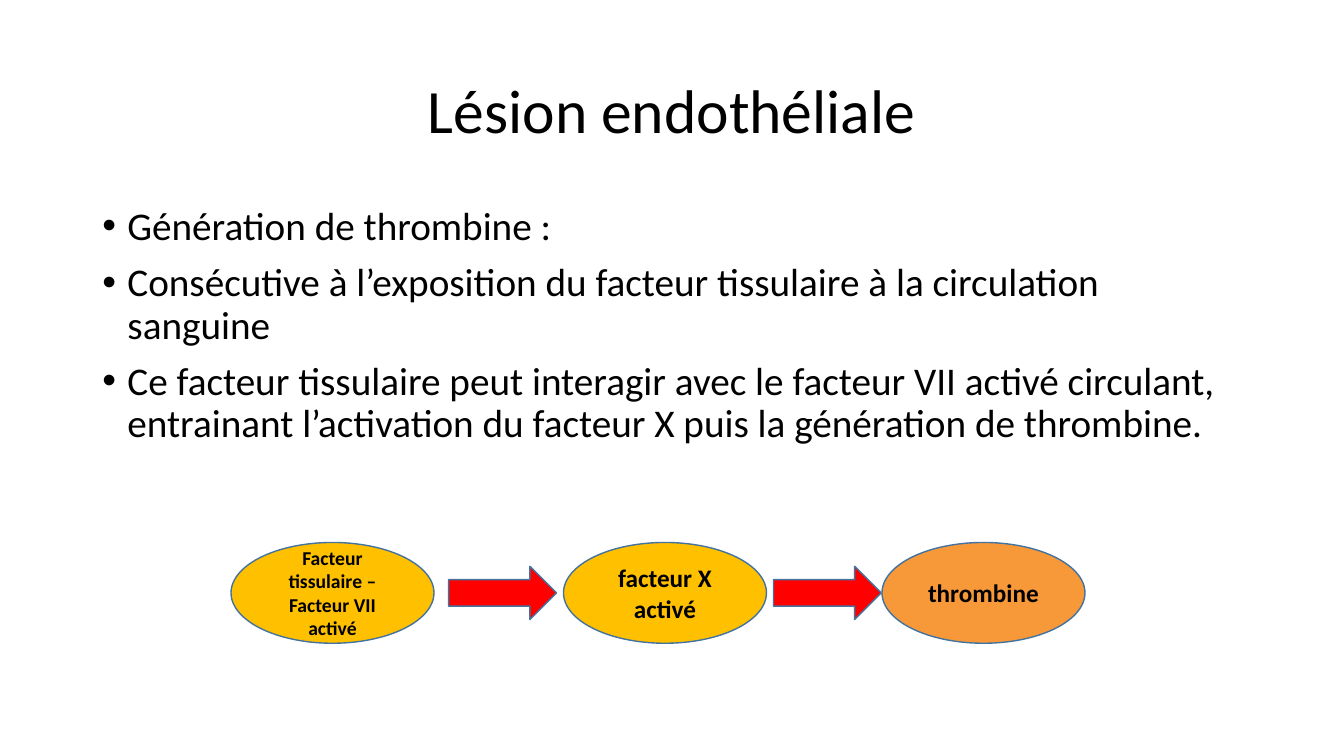
"""Builds the slide on endothelial injury and thrombin generation."""
import pptx
import pptx.util
import pptx.dml.color
import pptx.enum.shapes
import pptx.enum.text
import pptx.oxml

Pt = pptx.util.Pt
RGBColor = pptx.dml.color.RGBColor
MSO_SHAPE = pptx.enum.shapes.MSO_SHAPE
PP_ALIGN = pptx.enum.text.PP_ALIGN
MSO_ANCHOR = pptx.enum.text.MSO_ANCHOR

BLACK = RGBColor(0x00, 0x00, 0x00)
GOLD = RGBColor(0xFF, 0xC0, 0x00)
ORANGE = RGBColor(0xF7, 0x98, 0x39)
RED = RGBColor(0xFF, 0x00, 0x00)
OUTLINE = RGBColor(0x43, 0x73, 0x9E)

BULLETS = [
    "Génération de thrombine :",
    "Consécutive à l’exposition du facteur tissulaire à la circulation sanguine",
    "Ce facteur tissulaire peut interagir avec le facteur VII activé circulant, "
    "entrainant l’activation du facteur X puis la génération de thrombine.",
]
STAGES = [
    (165, GOLD, "Facteur tissulaire – Facteur VII activé", 14),
    (402.5, GOLD, "facteur X activé", 18),
    (630, ORANGE, "thrombine", 18),
]
ARROW_LEFTS = [320.5, 552.5]
STAGE_W, STAGE_H = 145, 72
ARROW_W, ARROW_H = 77, 38
FLOW_MIDDLE = 423.5


def set_format(obj, values):
    for name, value in values.items():
        setattr(obj, name, value)


def write(p, text, size, bold=False, **paragraph_format):
    p.text = text
    set_format(p, paragraph_format)
    font = p.runs[0].font
    set_format(font, {"name": "Calibri", "size": Pt(size), "bold": bold})
    font.color.rgb = BLACK


def add_title(slide, text):
    sp = slide.shapes.title
    set_format(sp, {"left": Pt(66), "top": Pt(29), "width": Pt(828), "height": Pt(104)})
    sp.text_frame.vertical_anchor = MSO_ANCHOR.MIDDLE
    write(sp.text_frame.paragraphs[0], text, 44,
          alignment=PP_ALIGN.CENTER, line_spacing=0.9)


def add_bullets(slide, items):
    tf = slide.shapes.add_textbox(Pt(66), Pt(144), Pt(828), Pt(342.5)).text_frame
    tf.word_wrap = True
    for i, item in enumerate(items):
        p = tf.add_paragraph() if i else tf.paragraphs[0]
        write(p, item, 28, line_spacing=0.9, space_before=Pt(10 if i else 0))
        pPr = p._p.get_or_add_pPr()
        pPr.set("marL", str(Pt(18)))
        pPr.set("indent", str(-Pt(18)))
        for tag, key, value in (("a:buFont", "typeface", "Arial"), ("a:buChar", "char", "•")):
            bullet = pptx.oxml.xmlchemy.OxmlElement(tag)
            bullet.set(key, value)
            pPr.append(bullet)


def add_flow_shape(slide, kind, left, width, height, fill):
    sp = slide.shapes.add_shape(kind, Pt(left), Pt(FLOW_MIDDLE - height / 2),
                                Pt(width), Pt(height))
    sp.shadow.inherit = False
    sp.fill.solid()
    sp.fill.fore_color.rgb = fill
    sp.line.color.rgb = OUTLINE
    sp.line.width = Pt(1)
    return sp


def add_stage(slide, left, fill, text, size):
    sp = add_flow_shape(slide, MSO_SHAPE.OVAL, left, STAGE_W, STAGE_H, fill)
    tf = sp.text_frame
    set_format(tf, {"word_wrap": True, "vertical_anchor": MSO_ANCHOR.MIDDLE})
    write(tf.paragraphs[0], text, size, bold=True, alignment=PP_ALIGN.CENTER)


def main():
    prs = pptx.Presentation()
    set_format(prs, {"slide_width": Pt(960), "slide_height": Pt(540)})
    slide = prs.slides.add_slide(prs.slide_layouts[5])
    add_title(slide, "Lésion endothéliale")
    add_bullets(slide, BULLETS)
    for stage in STAGES:
        add_stage(slide, *stage)
    for left in ARROW_LEFTS:
        add_flow_shape(slide, MSO_SHAPE.RIGHT_ARROW, left, ARROW_W, ARROW_H, RED)
    prs.save("out.pptx")


if __name__ == "__main__":
    main()
